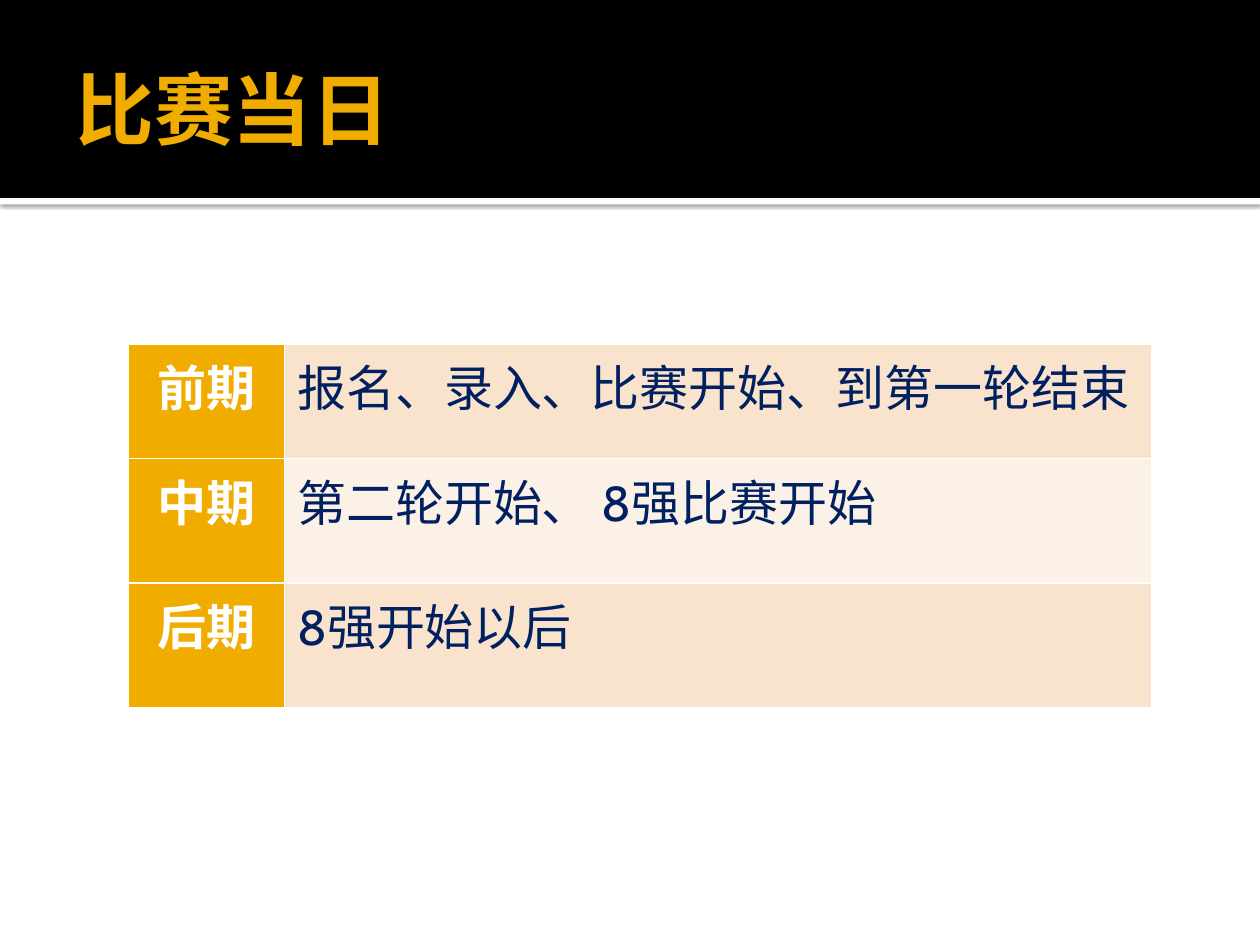
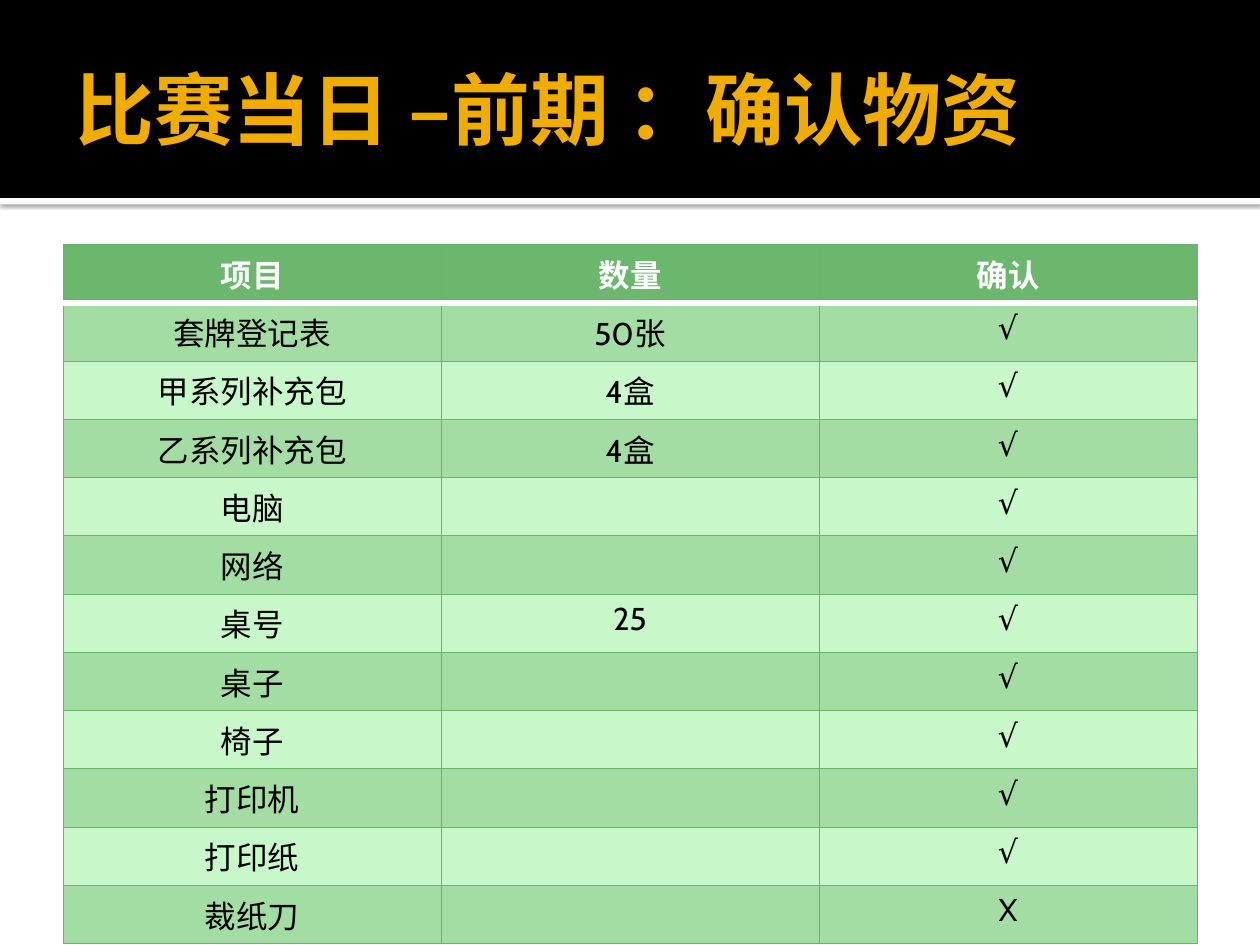
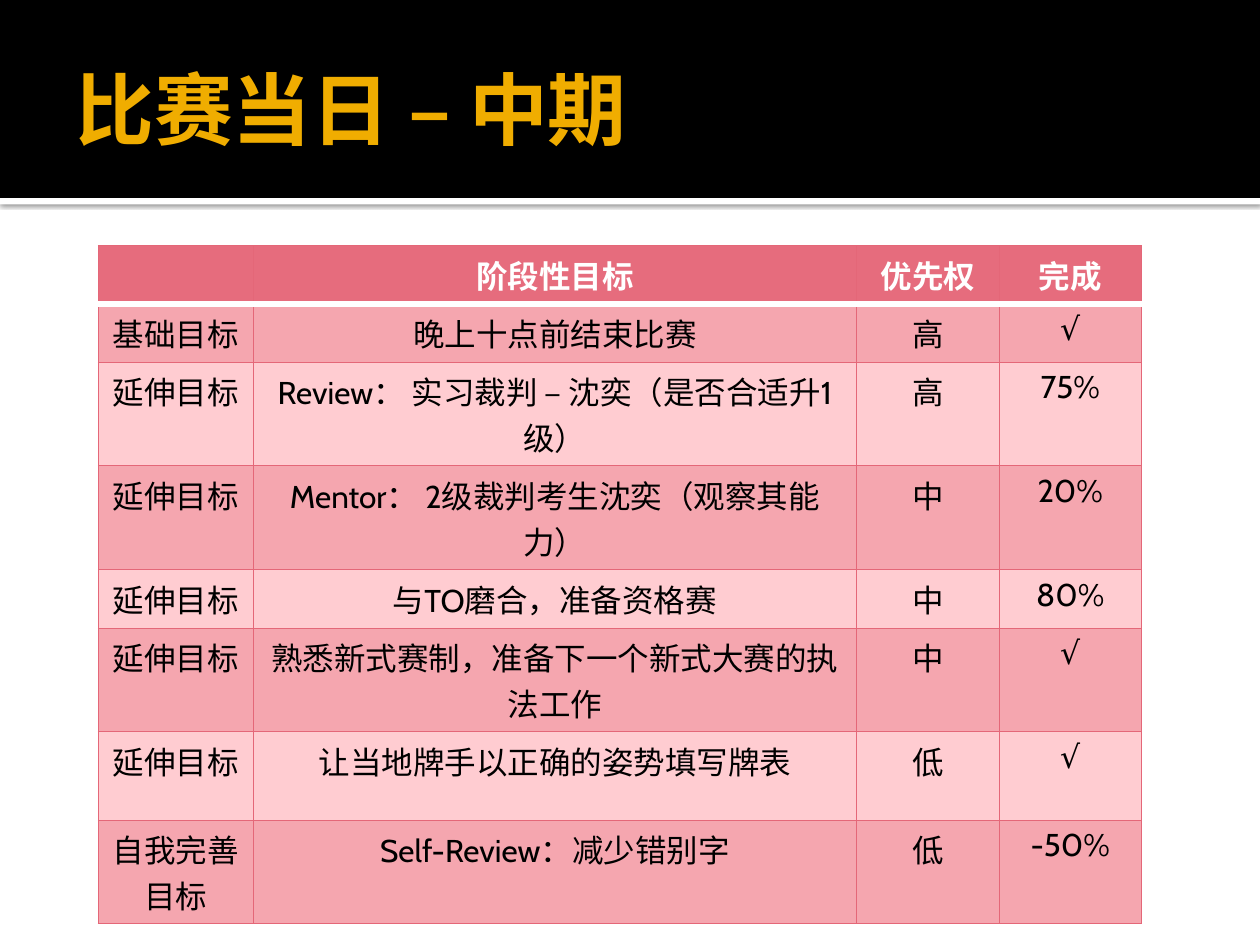
"""Build three match-day slides, each with a title band and one table."""
from lxml import etree
from pptx import Presentation
from pptx import util as u
from pptx.dml.color import RGBColor
from pptx.enum import lang, shapes, text
from pptx.oxml import ns

FONT = "Cabin"
BLACK = RGBColor(0x00, 0x00, 0x00)
WHITE = RGBColor(0xFF, 0xFF, 0xFF)
GOLD = RGBColor(0xF0, 0xAD, 0x00)
NAVY = RGBColor(0x00, 0x20, 0x60)
PEACH = RGBColor(0xF9, 0xE3, 0xCC)
PALE_PEACH = RGBColor(0xFC, 0xF1, 0xE7)
GREEN = RGBColor(0x6B, 0xB7, 0x6D)
GREEN_LINE = RGBColor(0x67, 0xB5, 0x69)
MID_GREEN = RGBColor(0xA3, 0xDD, 0xA4)
PALE_GREEN = RGBColor(0xC8, 0xF7, 0xC9)
PINK = RGBColor(0xE6, 0x6C, 0x7D)
PINK_LINE = RGBColor(0xE4, 0x67, 0x78)
MID_PINK = RGBColor(0xF5, 0xA6, 0xAF)
PALE_PINK = RGBColor(0xFF, 0xCC, 0xD1)


def write(frame, words, size, color, bold=False, align=text.PP_ALIGN.LEFT):
    paragraph = frame.paragraphs[0]
    paragraph.alignment = align
    paragraph.font.size = u.Pt(size)
    if words:
        run = paragraph.add_run()
        run.text = words
        run.font.name = FONT
        run.font.size = u.Pt(size)
        run.font.bold = bold
        run.font.color.rgb = color
        run.font.language_id = lang.MSO_LANGUAGE_ID.SIMPLIFIED_CHINESE


def add_border(cell, side, color, width):
    properties = cell._tc.get_or_add_tcPr()
    line = etree.SubElement(properties, ns.qn(f"a:ln{side}"), w=str(u.Pt(width)))
    fill = etree.SubElement(line, ns.qn("a:solidFill"))
    etree.SubElement(fill, ns.qn("a:srgbClr"), val=str(color))


phases = [
    ("前期", "报名、录入、比赛开始、到第一轮结束"),
    ("中期", "第二轮开始、 8强比赛开始"),
    ("后期", "8强开始以后"),
]
supplies = [
    ("项目", "数量", "确认"),
    ("套牌登记表", "50张", "√"),
    ("甲系列补充包", "4盒", "√"),
    ("乙系列补充包", "4盒", "√"),
    ("电脑", "", "√"),
    ("网络", "", "√"),
    ("桌号", "25", "√"),
    ("桌子", "", "√"),
    ("椅子", "", "√"),
    ("打印机", "", "√"),
    ("打印纸", "", "√"),
    ("裁纸刀", "", "X"),
]
goals = [
    ("", "阶段性目标", "优先权", "完成"),
    ("基础目标", "晚上十点前结束比赛", "高", "√"),
    ("延伸目标", "Review： 实习裁判 – 沈奕（是否合适升1级）", "高", "75%"),
    ("延伸目标", "Mentor： 2级裁判考生沈奕（观察其能力）", "中", "20%"),
    ("延伸目标", "与TO磨合，准备资格赛", "中", "80%"),
    ("延伸目标", "熟悉新式赛制，准备下一个新式大赛的执法工作", "中", "√"),
    ("延伸目标", "让当地牌手以正确的姿势填写牌表", "低", "√"),
    ("自我完善目标", "Self-Review：减少错别字", "低", "-50%"),
]
pages = [
    dict(title="比赛当日", rows=phases, left=2.59, top=6.93,
         widths=[3.15, 17.48], heights=[2.31, 2.51, 2.51], size=28, ink=NAVY,
         head=GOLD, bands=[PEACH, PALE_PEACH], line=WHITE, line_width=1,
         head_row=False),
    dict(title="比赛当日 –前期 ：确认物资", rows=supplies, left=1.27, top=4.93,
         widths=[7.62] * 3, heights=[1.04] * 12, size=18, ink=BLACK,
         head=GREEN, bands=[PALE_GREEN, MID_GREEN], line=GREEN_LINE,
         line_width=0.5, head_row=True),
    dict(title="比赛当日 – 中期", rows=goals, left=1.98, top=4.95,
         widths=[3.12, 12.17, 2.87, 2.87], heights=[1.04] * 5 + [1.78] * 3,
         size=18, ink=BLACK, head=PINK, bands=[PALE_PINK, MID_PINK],
         line=PINK_LINE, line_width=0.5, head_row=True),
]

presentation = Presentation()
presentation.slide_width = u.Cm(25.4)
presentation.slide_height = u.Cm(19.05)
layout = presentation.slide_layouts.get_by_name("Title Only")
slides = [presentation.slides.add_slide(layout) for page in pages]

bands = [(3.99, 0.13, WHITE), (0, 3.99, BLACK)]
for position, (top, height, color) in enumerate(bands, start=2):
    band = slides[0].shapes.add_shape(
        shapes.MSO_SHAPE.RECTANGLE, 0, u.Cm(top), u.Cm(25.4), u.Cm(height))
    band.fill.solid()
    band.fill.fore_color.rgb = color
    band.line.fill.background()
    band.shadow.inherit = False
    if color == WHITE:
        effects = band._element.spPr.find(ns.qn("a:effectLst"))
        shadow = etree.SubElement(
            effects, ns.qn("a:outerShdw"), blurRad=str(u.Pt(2.5)),
            dist=str(u.Pt(0.8)), dir="5400000", algn="tl", rotWithShape="0")
        shade = etree.SubElement(shadow, ns.qn("a:srgbClr"), val=str(BLACK))
        etree.SubElement(shade, ns.qn("a:alpha"), val="60000")
    layout.shapes._spTree.insert(position, band._element)

for slide, page in zip(slides, pages):
    title = slide.shapes.title
    title.left, title.top = u.Cm(1.27), u.Cm(0.43)
    title.width, title.height = u.Cm(22.86), u.Cm(3.48)
    frame = title.text_frame
    frame.auto_size = text.MSO_AUTO_SIZE.NONE
    frame.vertical_anchor = text.MSO_ANCHOR.MIDDLE
    frame.margin_left = u.Cm(0.25)
    frame.margin_right = frame.margin_top = frame.margin_bottom = u.Cm(0.13)
    write(frame, page["title"], size=45, color=GOLD, bold=True)

    widths, heights = page["widths"], page["heights"]
    table = slide.shapes.add_table(
        len(heights), len(widths), u.Cm(page["left"]), u.Cm(page["top"]),
        u.Cm(sum(widths)), u.Cm(sum(heights))).table
    table.first_row = table.horz_banding = False
    for column, width in zip(table.columns, widths):
        column.width = u.Cm(width)
    for row, height in zip(table.rows, heights):
        row.height = u.Cm(height)

    for row_index, row in enumerate(page["rows"]):
        for column_index, words in enumerate(row):
            cell = table.cell(row_index, column_index)
            is_head = (row_index if page["head_row"] else column_index) == 0
            for side in "LRTB":
                under_head = page["head_row"] and (row_index, side) in [(0, "B"), (1, "T")]
                if under_head:
                    add_border(cell, side, WHITE, 3.78)
                else:
                    add_border(cell, side, page["line"], page["line_width"])
            cell.fill.solid()
            cell.fill.fore_color.rgb = page["head"] if is_head else page["bands"][row_index % 2]
            centred = is_head or page["head_row"]
            write(cell.text_frame, words, size=page["size"],
                  color=WHITE if is_head else page["ink"], bold=is_head,
                  align=text.PP_ALIGN.CENTER if centred else text.PP_ALIGN.LEFT)

presentation.save("out.pptx")
